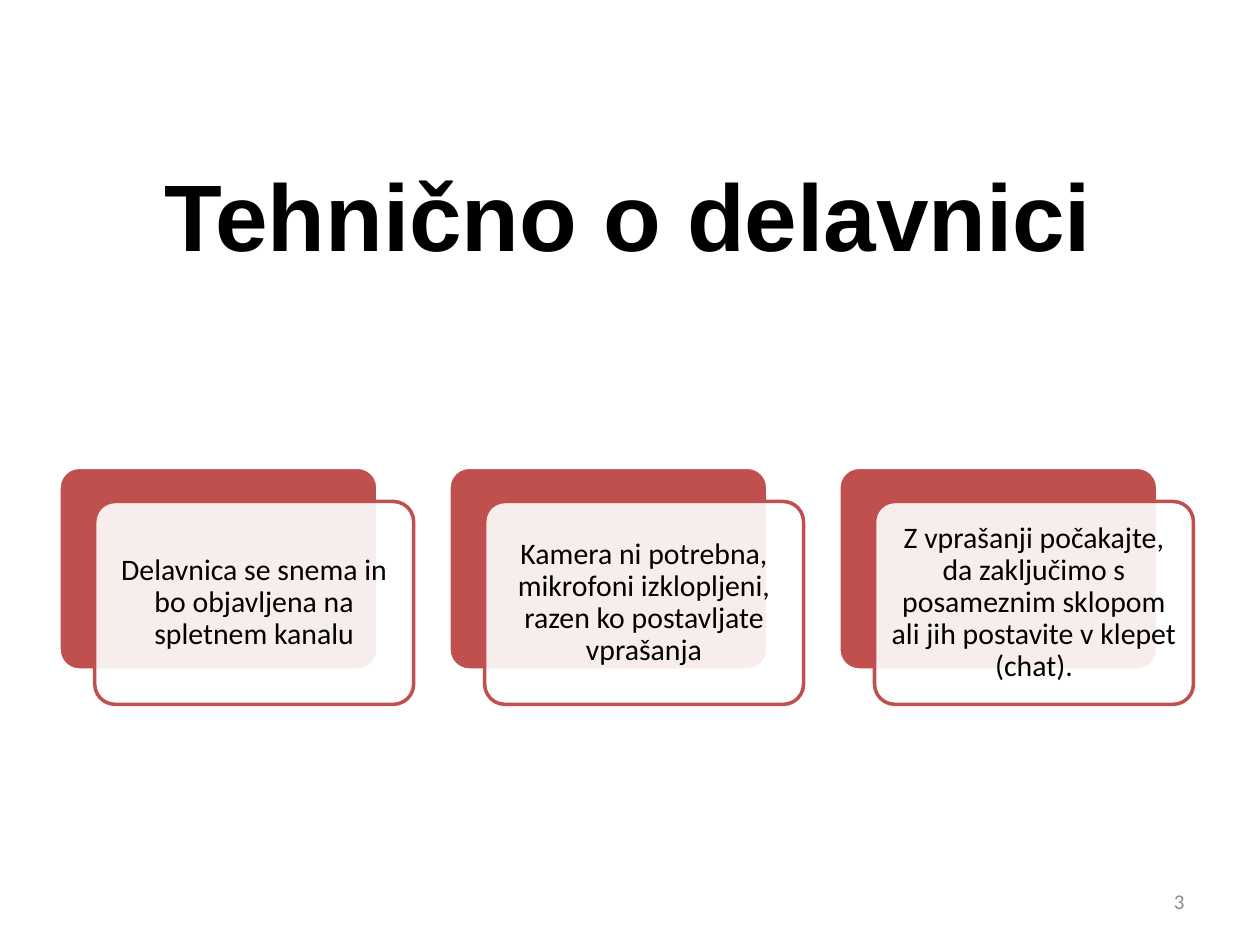
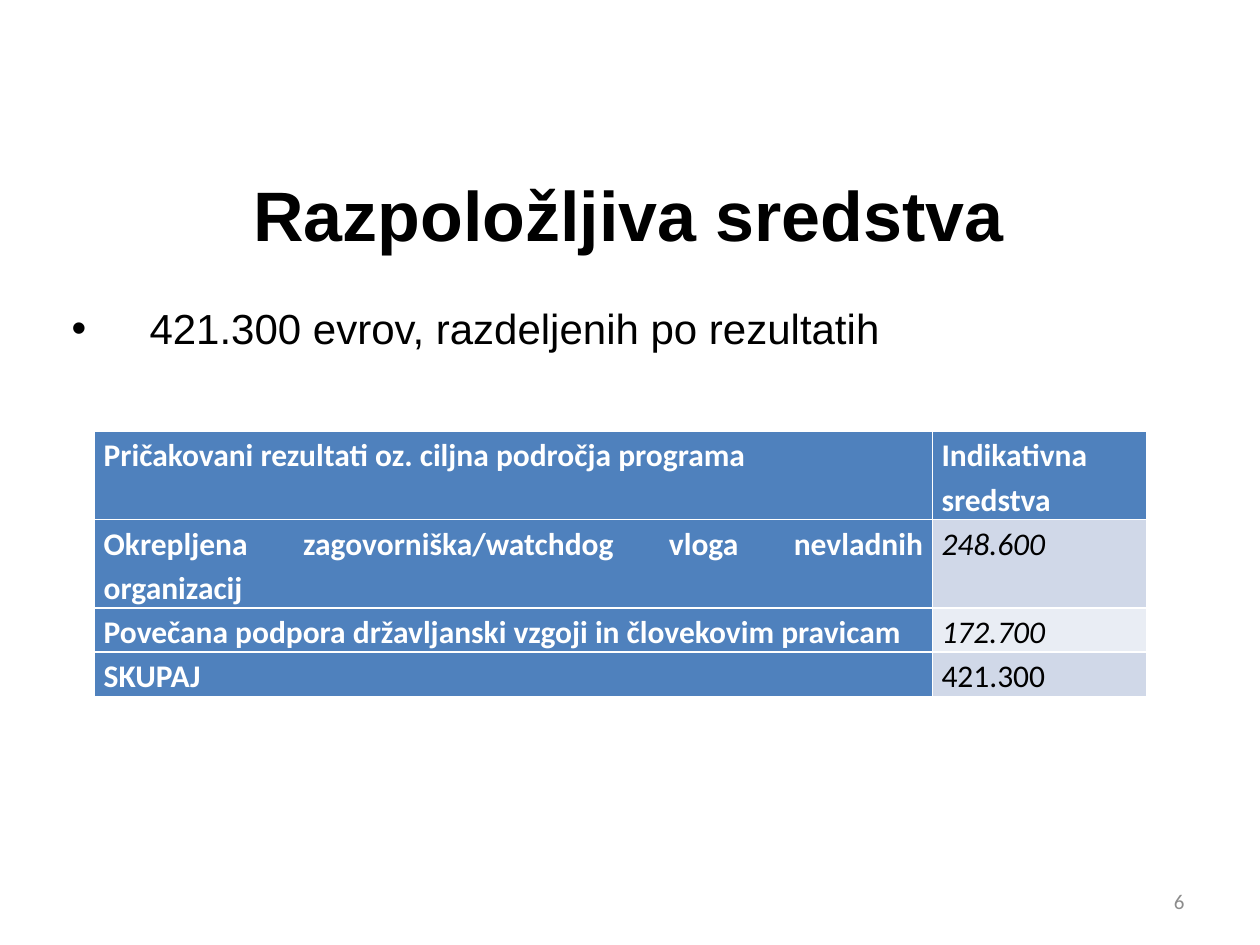
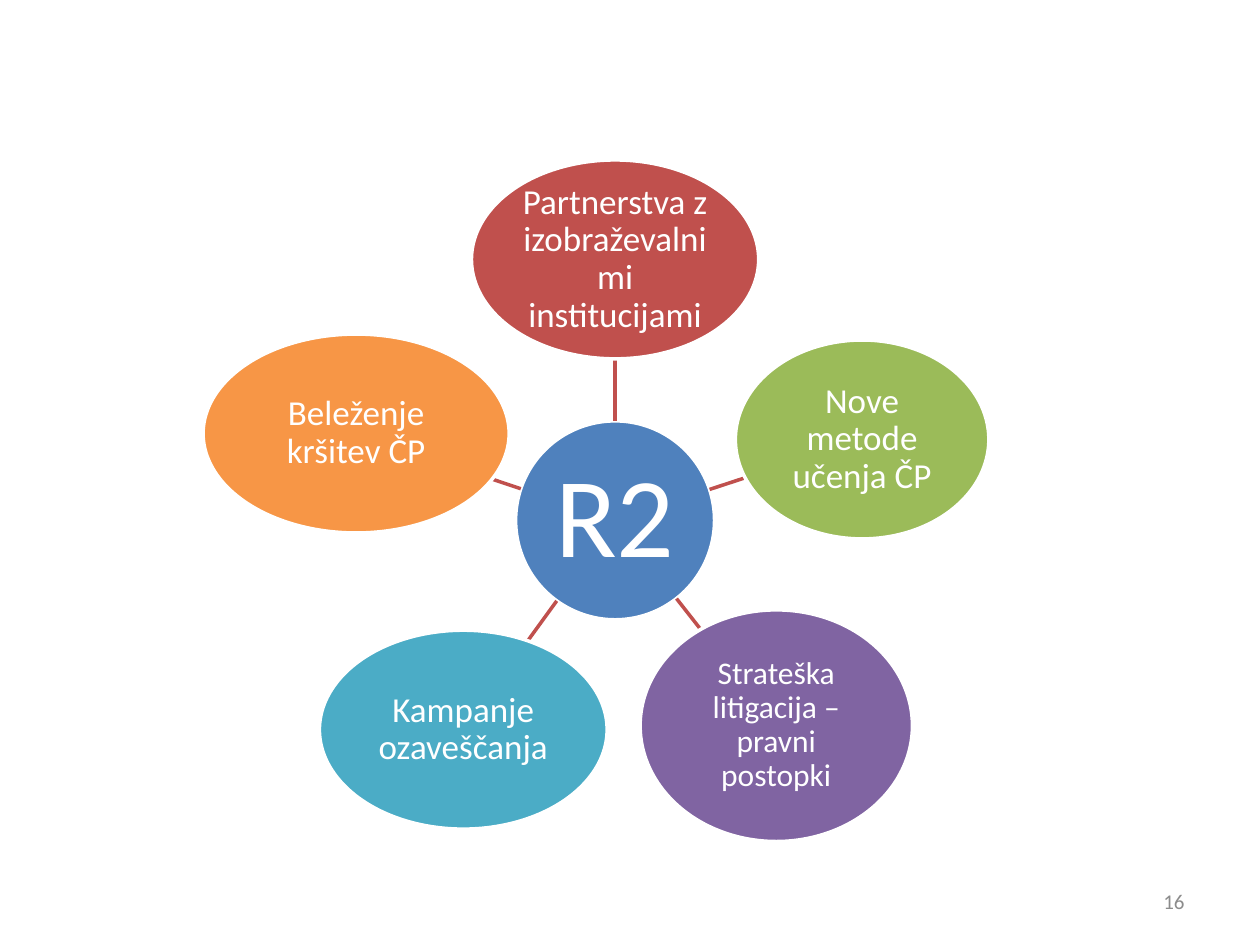
from math import hypot

from lxml import etree
from pptx import Presentation
from pptx import util as u
from pptx.dml.color import RGBColor
from pptx.enum import shapes, text
from pptx.oxml.ns import qn

COLORS = {
    "black": "000000", "white": "FFFFFF", "number": "8C8C8C",
    "blue": "4F81BD", "red": "C0504D", "green": "9BBB59",
    "purple": "8064A2", "teal": "4BACC6", "orange": "F79646",
    "band_dark": "D0D8E8", "band_light": "E9EDF4",
}
CENTER, RIGHT, JUSTIFY = (text.PP_ALIGN.CENTER, text.PP_ALIGN.RIGHT,
                          text.PP_ALIGN.JUSTIFY)
MIDDLE, TOP = text.MSO_ANCHOR.MIDDLE, text.MSO_ANCHOR.TOP
TITLE_BOX = (1.24, 2.72, 22.86, 3.18)
BODY_BOX = (1.19, 5.97, 22.86, 10.3)
NUMBER_BOX = (23.09, 17.65, 1.04, 1.02)
LINE_WIDTH = 2


# Shared helpers
def rgb(name):
    return RGBColor.from_string(COLORS[name])


def cm_box(box):
    return [u.Cm(v) for v in box]


def apply(obj, values):
    for name, value in values.items():
        setattr(obj, name, value)


def place(sp, box):
    apply(sp, dict(zip(("left", "top", "width", "height"), cm_box(box))))


def write(tf, content, size, color="black", font="Calibri", align=CENTER,
          anchor=MIDDLE, inset=None, spacing=None, **style):
    apply(tf, {"word_wrap": True, "auto_size": text.MSO_AUTO_SIZE.NONE,
               "vertical_anchor": anchor})
    if inset is not None:
        sides = ("left", "right", "top", "bottom")
        apply(tf, {f"margin_{side}": u.Cm(inset) for side in sides})
    write_paragraph(tf, content, size, color, font, align, spacing, **style)


def write_paragraph(tf, content, size, color, font, align, spacing, **style):
    p = tf.paragraphs[0]
    apply(p, {"alignment": align, "line_spacing": spacing,
              "space_before": u.Pt(0)})
    r = p.add_run()
    r.text = content
    apply(r.font, {"size": u.Pt(size), "name": font, **style})
    r.font.color.rgb = rgb(color)


def add_shape(s, kind, box, fill, line):
    sp = s.shapes.add_shape(kind, *cm_box(box))
    sp.shadow.inherit = False
    sp.fill.solid()
    sp.fill.fore_color.rgb = rgb(fill)
    sp.line.color.rgb = rgb(line)
    sp.line.width = u.Pt(LINE_WIDTH)
    return sp


def set_alpha(sp, percent):
    color = sp.fill._xPr.find(qn("a:solidFill"))[0]
    etree.SubElement(color, qn("a:alpha"), val=str(percent * 1000))


def add_slide(prs, layout, number):
    s = prs.slides.add_slide(prs.slide_layouts[layout])
    sp = s.shapes.add_textbox(*cm_box(NUMBER_BOX))
    write(sp.text_frame, number, 12, "number", align=RIGHT)
    return s


def add_title(s, content, size):
    place(s.shapes.title, TITLE_BOX)
    write(s.shapes.title.text_frame, content, size, font="Arial", bold=True)


# Row of cards, each a white panel over a red plate
def add_cards(s, box, notes):
    left, top, width, height = box
    pitch, shift_x, shift_y = 7.86, 0.72, 0.69
    plate_w, plate_h = width - 2 * pitch - shift_x, height - shift_y
    for i, note in enumerate(notes):
        x = left + i * pitch
        for dx, dy, fill, line in ((0, 0, "red", "white"),
                                   (shift_x, shift_y, "white", "red")):
            sp = add_shape(s, shapes.MSO_SHAPE.ROUNDED_RECTANGLE,
                           (x + dx, top + dy, plate_w, plate_h), fill, line)
            sp.adjustments[0] = 0.1
        set_alpha(sp, 90)
        write(sp.text_frame, note, 17, inset=0.18, spacing=0.9)


# Single bullet in the body placeholder
def add_bullet(s, content):
    sp = s.placeholders[1]
    place(sp, BODY_BOX)
    pPr = sp.text_frame.paragraphs[0]._p.get_or_add_pPr()
    indent = u.Cm(1.57)
    pPr.set("marL", str(indent))
    pPr.set("indent", str(-indent))
    etree.SubElement(pPr, qn("a:buFont"), typeface="Arial")
    etree.SubElement(pPr, qn("a:buChar"), char="•")
    write(sp.text_frame, content, 24, font="Arial", align=JUSTIFY, anchor=TOP)


# Table of funds: blue heads, banded amounts
def add_funds_table(s, box, rows):
    table = s.shapes.add_table(len(rows), 2, *cm_box(box)).table
    table.first_col = True
    for col, width in zip(table.columns, (16.89, 4.32)):
        col.width = u.Cm(width)
    for row, height in zip(table.rows, (1.55, 1.55, 0.89, 0.89)):
        row.height = u.Cm(height)
    for i, row in enumerate(rows):
        for j, content in enumerate(row):
            cell = table.cell(i, j)
            is_head = i == 0 or j == 0
            band = "band_dark" if i % 2 else "band_light"
            cell.fill.solid()
            cell.fill.fore_color.rgb = rgb("blue" if is_head else band)
            apply(cell, {"margin_left": u.Cm(0.18), "margin_right": u.Cm(0.18),
                         "margin_top": 0, "margin_bottom": 0})
            write_paragraph(cell.text_frame, content, 18,
                            "white" if is_head else "black", "Calibri",
                            JUSTIFY, 1.15, bold=is_head,
                            italic=not is_head and i < len(rows) - 1)


# Hub with ovals around it; spokes run from edge to edge
def add_oval(s, center, size, fill, content, font_size, inset):
    (cx, cy), (w, h) = center, size
    sp = add_shape(s, shapes.MSO_SHAPE.OVAL,
                   (cx - w / 2, cy - h / 2, w, h), fill, "white")
    write(sp.text_frame, content, font_size, "white", inset=inset, spacing=0.9)


def edge_point(center, size, toward):
    dx, dy = toward[0] - center[0], toward[1] - center[1]
    scale = 1 / hypot(dx / (size[0] / 2), dy / (size[1] / 2))
    return center[0] + dx * scale, center[1] + dy * scale


def add_spoke(s, start, end):
    line = s.shapes.add_connector(shapes.MSO_CONNECTOR.STRAIGHT,
                                  *cm_box((*start, *end)))
    line.line.color.rgb = rgb("red")
    line.line.width = u.Pt(LINE_WIDTH)
    etree.SubElement(line._element.spPr, qn("a:effectLst"))


def add_hub(s, hub, label, ovals):
    hub_size = (4.01, 4.01)
    add_oval(s, hub, hub_size, "blue", label, 65, 0.13)
    for (dx, dy), size, fill, content, font_size in ovals:
        center = (hub[0] + dx, hub[1] + dy)
        add_spoke(s, edge_point(hub, hub_size, center),
                  edge_point(center, size, hub))
        add_oval(s, center, size, fill, content, font_size, 0.03)


# Slides
def workshop_slide(prs):
    s = add_slide(prs, 5, "3")
    add_title(s, "Tehnično o delavnici", 54)
    add_cards(s, (1.19, 9.42, 22.87, 4.78), [
        "Delavnica se snema in bo objavljena na spletnem kanalu",
        "Kamera ni potrebna, mikrofoni izklopljeni, razen ko postavljate "
        "vprašanja",
        "Z vprašanji počakajte, da zaključimo s posameznim sklopom ali jih "
        "postavite v klepet (chat).",
    ])


def funds_slide(prs):
    s = add_slide(prs, 1, "6")
    add_title(s, "Razpoložljiva sredstva", 40)
    add_bullet(s, "421.300 evrov, razdeljenih po rezultatih")
    add_funds_table(s, (1.91, 8.69, 21.21, 4.88), [
        ("Pričakovani rezultati oz. ciljna področja programa",
         "Indikativna sredstva"),
        ("Okrepljena zagovorniška/watchdog vloga nevladnih organizacij",
         "248.600"),
        ("Povečana podpora državljanski vzgoji in človekovim pravicam",
         "172.700"),
        ("SKUPAJ", "421.300"),
    ])


def result_slide(prs):
    s = add_slide(prs, 6, "16")
    add_hub(s, (12.4, 10.49), "R2", [
        ((0, -5.26), (5.79, 4.01), "red",
         "Partnerstva z izobraževalnimi institucijami", 20),
        ((4.98, -1.63), (5.11, 4.01), "green", "Nove metode učenja ČP", 20),
        ((3.25, 4.14), (5.49, 4.67), "purple",
         "Strateška litigacija – pravni postopki", 18),
        ((-3.06, 4.22), (5.8, 4.01), "teal", "Kampanje ozaveščanja", 20),
        ((-5.22, -1.75), (6.17, 4.01), "orange", "Beleženje kršitev ČP", 20),
    ])


def main():
    prs = Presentation()
    prs.slide_width, prs.slide_height = u.Cm(25.4), u.Cm(19.05)
    workshop_slide(prs)
    funds_slide(prs)
    result_slide(prs)
    prs.save("out.pptx")


if __name__ == "__main__":
    main()
